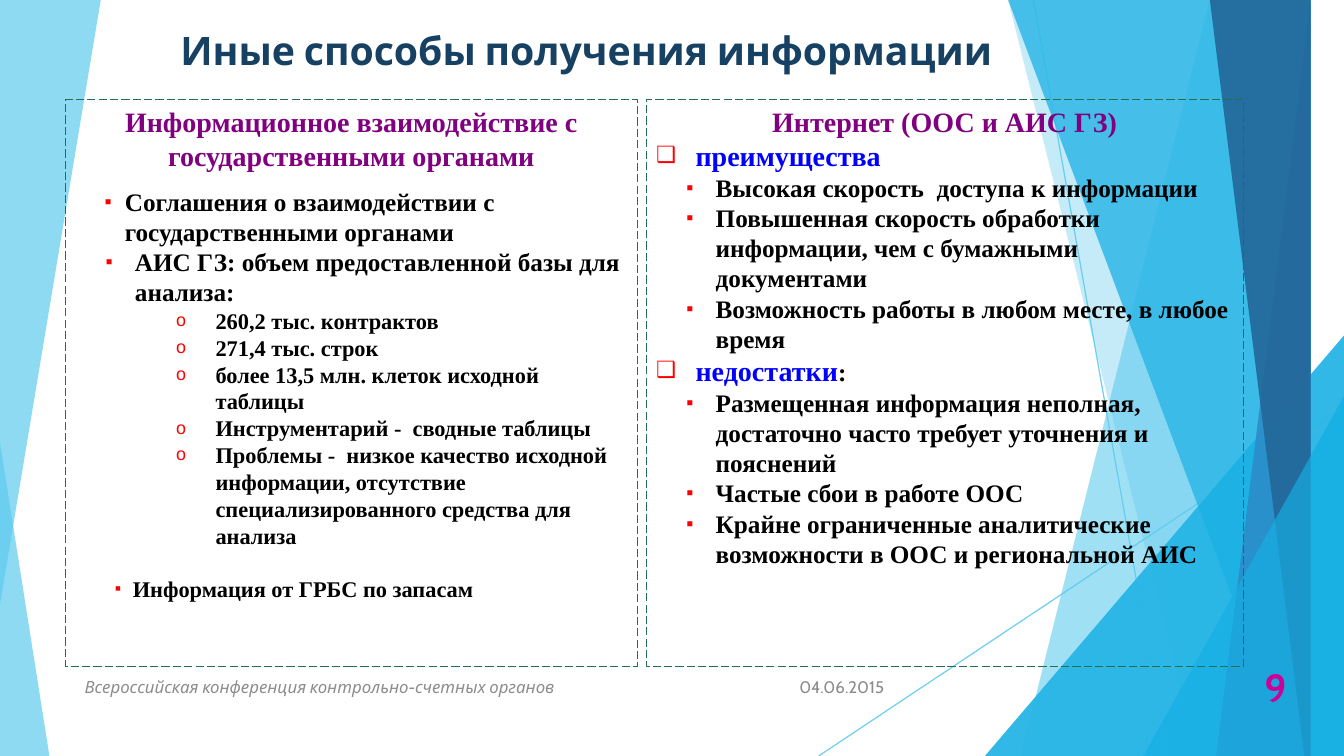
from pptx import Presentation
from pptx.dml.color import RGBColor
from pptx.enum.dml import MSO_LINE
from pptx.enum.shapes import MSO_CONNECTOR, MSO_SHAPE
from pptx.enum.text import MSO_ANCHOR, PP_ALIGN
from pptx.oxml.ns import qn
from pptx.util import Inches, Pt
from lxml import etree

LEFT, CENTER, RIGHT = PP_ALIGN.LEFT, PP_ALIGN.CENTER, PP_ALIGN.RIGHT
TOP, MIDDLE, BOTTOM = MSO_ANCHOR.TOP, MSO_ANCHOR.MIDDLE, MSO_ANCHOR.BOTTOM
STRAIGHT, LONG_DASH = MSO_CONNECTOR.STRAIGHT, MSO_LINE.LONG_DASH
RECTANGLE, TRIANGLE = MSO_SHAPE.RECTANGLE, MSO_SHAPE.ISOSCELES_TRIANGLE
W, H = 13.33, 7.5

COLORS = {
    "sky": "5FCBEF", "cyan": "17B0E4", "blue": "2E83C3", "navy": "226292",
    "title": "174162", "grey": "8C8C8C", "number": "CC0099", "frame": "236F50",
    "heading": "800080", "topic": "0000FF", "text": "000000", "bullet": "FF0000",
}

# Paragraph styles: size, colour, left margin, first-line indent, bullet
STYLES = {
    "heading": dict(size=20, color="heading", align=CENTER),
    "topic": dict(size=20, color="topic", margin=0.39, indent=-0.39, bullet="❑"),
    "first": dict(size=18, margin=0.49, indent=-0.2, bullet="▪", before=10),
    "item": dict(size=18, margin=0.59, indent=-0.29, bullet="▪"),
    "detail": dict(size=16, margin=1.39, indent=-0.39, bullet="o"),
    "last": dict(size=16, margin=0.57, indent=-0.18, bullet="▪", before=19),
}

# Panels: position and (style, text) paragraphs
PANELS = [
    ((6.41, 0.99, 5.92, 5.62), [
        ("heading", "Интернет (ООС и АИС ГЗ)"),
        ("topic", "преимущества"),
        ("item", "Высокая скорость  доступа к информации"),
        ("item", "Повышенная скорость обработки информации, чем с бумажными документами"),
        ("item", "Возможность работы в любом месте, в любое время"),
        ("topic", "недостатки", ":"),
        ("item", "Размещенная информация неполная, достаточно часто требует "
                 "уточнения и пояснений"),
        ("item", "Частые сбои в работе ООС"),
        ("item", "Крайне ограниченные аналитические возможности в ООС и региональной АИС"),
    ]),
    ((0.65, 0.99, 5.67, 5.62), [
        ("heading", "Информационное взаимодействие с государственными органами"),
        ("first", "Соглашения о взаимодействии с государственными органами"),
        ("item", "АИС ГЗ: объем предоставленной базы для анализа:"),
        ("detail", "260,2 тыс. контрактов"),
        ("detail", "271,4 тыс. строк"),
        ("detail", "более 13,5 млн. клеток исходной таблицы"),
        ("detail", "Инструментарий -  сводные таблицы"),
        ("detail", "Проблемы -  низкое качество исходной информации, отсутствие "
                   "специализированного средства для анализа"),
        ("last", "Информация от ГРБС по запасам"),
    ]),
]

# Single-line texts: position, anchor, text, format
LABELS = [
    ((0.6, 0.23, 10.43, 0.55), BOTTOM, "Иные способы получения информации",
     dict(size=28, color="title", bold=True, align=CENTER)),
    ((7.71, 6.61, 1.16, 0.4), MIDDLE, "04.06.2015",
     dict(size=12, color="grey", align=RIGHT)),
    ((0.74, 6.61, 6.89, 0.4), MIDDLE, "Всероссийская конференция контрольно-счетных органов",
     dict(size=12, color="grey", italic=True)),
    ((12.11, 6.61, 0.75, 0.4), MIDDLE, "9",
     dict(size=28, color="number", bold=True, align=RIGHT)),
]

# Backdrop: rays, bands to the right edge (top x, bottom x) and corner triangles (x, y)
RAYS = [((10.25, 0), (11.58, H)), ((W, 4.03), (8.12, H))]
BANDS = [
    ("band", (12.28, 10.04), "sky", 36),
    ("band", (10.5, 11.83), "sky", 20),
    ("triangle", (9.77, 3.33), "cyan", 66),
    ("band", (10.21, 12.91), "cyan", 50),
    ("band", (13.03, 11.92), "blue", 70),
    ("band", (11.96, 13.18), "navy", 80),
    ("triangle", (11.34, 3.93), "cyan", 66),
]
LAYERS = 2  # the translucent backdrop is laid twice for a deeper tone


def rgb(name):
    return RGBColor.from_string(COLORS[name])


def set_alpha(sp_pr, percent):
    clr = next(sp_pr.iter(qn("a:srgbClr")))
    etree.SubElement(clr, qn("a:alpha")).set("val", str(percent * 1000))


def tint(s, color, alpha):
    s.shadow.inherit = False
    s.fill.solid()
    s.fill.fore_color.rgb = rgb(color)
    s.line.fill.background()
    set_alpha(s._element.spPr, alpha)


def polygon(points, color, alpha):
    fb = shapes.build_freeform(*points[0], scale=Inches(1))
    fb.add_line_segments(points[1:], close=True)
    tint(fb.convert_to_shape(), color, alpha)


def triangle(box, apex, color, alpha):
    s = shapes.add_shape(TRIANGLE, *map(Inches, box))
    s.adjustments[0] = apex
    tint(s, color, alpha)


def ray(start, end):
    c = shapes.add_connector(STRAIGHT, *map(Inches, start + end))
    c.line.color.rgb = rgb("sky")
    c.line.width = Pt(0.75)
    sp_pr = c._element.spPr
    set_alpha(sp_pr, 70)
    etree.SubElement(sp_pr, qn("a:effectLst"))


def add_text(p, text, size=18, color="text", font="Cabin", bold=False, italic=False,
             align=LEFT, margin=0, indent=0, bullet=None, before=0):
    r = p.add_run()
    r.text = text
    r.font.size, r.font.name = Pt(size), font
    r.font.bold, r.font.italic = bold, italic
    r.font.color.rgb = rgb(color)
    p.alignment, p.space_before = align, Pt(before)
    if bullet:
        ppr = p._p.get_or_add_pPr()
        ppr.set("marL", str(Inches(margin)))
        ppr.set("indent", str(Inches(indent)))
        clr = etree.SubElement(ppr, qn("a:buClr"))
        etree.SubElement(clr, qn("a:srgbClr")).set("val", COLORS["bullet"])
        etree.SubElement(ppr, qn("a:buSzPct")).set("val", "80000")
        etree.SubElement(ppr, qn("a:buFont")).set("typeface", "Arial")
        etree.SubElement(ppr, qn("a:buChar")).set("char", bullet)


prs = Presentation()
prs.slide_width, prs.slide_height = Inches(W), Inches(H)
shapes = prs.slides.add_slide(prs.slide_layouts[6]).shapes

# Backdrop
triangle((0, 4.39, 0.49, 3.11), 0, "sky", 70)
polygon([(0, 0), (0.94, 0), (0, 6.22)], "sky", 70)
for _ in range(LAYERS):
    for start, end in RAYS:
        ray(start, end)
    for kind, (a, b), color, alpha in BANDS:
        if kind == "band":
            polygon([(a, 0), (W, 0), (W, H), (b, H)], color, alpha)
        else:
            triangle((a, b, W - a, H - b), 1, color, alpha)

# Title and footer
for box, anchor, text, style in LABELS:
    tf = shapes.add_textbox(*map(Inches, box)).text_frame
    tf.word_wrap, tf.vertical_anchor = True, anchor
    add_text(tf.paragraphs[0], text, **style)

# Dashed panels
for box, paragraphs in PANELS:
    s = shapes.add_shape(RECTANGLE, *map(Inches, box))
    s.shadow.inherit = False
    s.fill.background()
    s.line.color.rgb = rgb("frame")
    s.line.width, s.line.dash_style = Pt(0.75), LONG_DASH
    tf = s.text_frame
    tf.word_wrap, tf.vertical_anchor = True, TOP
    for i, (style, text, *tail) in enumerate(paragraphs):
        p = tf.add_paragraph() if i else tf.paragraphs[0]
        add_text(p, text, font="Times New Roman", bold=True, **STYLES[style])
        for extra in tail:
            r = p.add_run()
            r.text = extra
            r.font.size, r.font.name, r.font.bold = Pt(18), "Times New Roman", True
            r.font.color.rgb = rgb("text")

prs.save("out.pptx")
